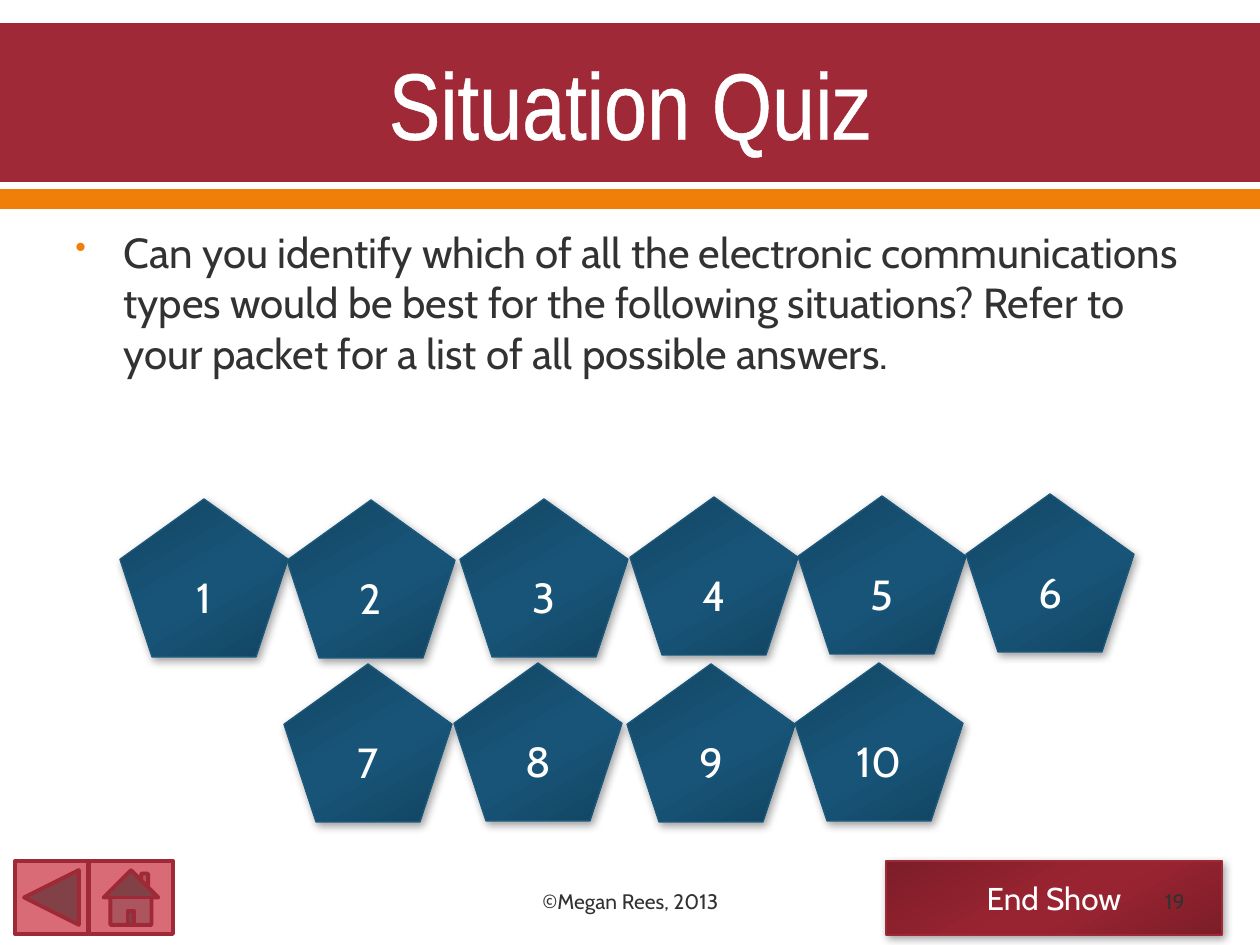
from dataclasses import dataclass

from lxml import etree
from pptx import Presentation
from pptx.dml.color import RGBColor
from pptx.enum.shapes import MSO_SHAPE
from pptx.enum.text import MSO_ANCHOR, PP_ALIGN
from pptx.oxml.ns import qn
from pptx.shapes.autoshape import Shape
from pptx.slide import Slide
from pptx.util import Emu, Pt

RECTANGLE = MSO_SHAPE.RECTANGLE
PENTAGON = MSO_SHAPE.REGULAR_PENTAGON
HOME = MSO_SHAPE.ACTION_BUTTON_HOME
BACK = MSO_SHAPE.ACTION_BUTTON_BACK_OR_PREVIOUS
BLANK_BUTTON = MSO_SHAPE.ACTION_BUTTON_CUSTOM
LEFT, CENTER, RIGHT = PP_ALIGN.LEFT, PP_ALIGN.CENTER, PP_ALIGN.RIGHT
TOP, MIDDLE = MSO_ANCHOR.TOP, MSO_ANCHOR.MIDDLE

EMU_PER_PX = 914400 / 126
EMU_PER_POINT = 12700
ANGLE_UNIT = 60000
BLANK_LAYOUT = 6


@dataclass(frozen=True)
class Theme:
    red: str = "9F2936"
    red_dark: str = "7C1D28"
    red_bright: str = "992431"
    pink: str = "D96B77"
    orange: str = "F07F09"
    blue: str = "1B587C"
    blue_dark: str = "134461"
    blue_bright: str = "175478"
    white: str = "FFFFFF"
    ink: str = "323232"
    shadow: str = "000000"
    title_font: str = "Arial Narrow"
    body_font: str = "Cabin"
    title_size: int = 54
    body_size: int = 24
    button_size: int = 18
    footer_size: int = 12
    thin_line: float = 0.79
    icon_line: float = 2.22
    title_outline: float = 1.1


THEME = Theme()


@dataclass(frozen=True)
class Box:
    left: int
    top: int
    width: int
    height: int


@dataclass(frozen=True)
class Label:
    text: str
    size: int
    color: str = THEME.white
    font: str = THEME.body_font
    align: PP_ALIGN = CENTER
    anchor: MSO_ANCHOR = MIDDLE


@dataclass(frozen=True)
class Glossy:
    """Dark-bright-dark gradient with a thin line."""
    dark: str
    bright: str
    line: str


BLUE_GLOSS = Glossy(THEME.blue_dark, THEME.blue_bright, THEME.blue)
RED_GLOSS = Glossy(THEME.red_dark, THEME.red_bright, THEME.red)

BANDS = ((Box(0, 23, 1260, 159), THEME.red), (Box(0, 189, 1260, 20), THEME.orange))
QUESTION_CORNERS = (
    (120, 499), (287, 500), (460, 499), (630, 497), (798, 496), (966, 494),
    (284, 664), (454, 663), (627, 664), (795, 663),
)
QUESTION_WIDTH, QUESTION_HEIGHT = 168, 158
ICON_BUTTONS = ((HOME, Box(89, 861, 84, 73)), (BACK, Box(15, 861, 73, 73)))
END_BUTTON = Box(886, 861, 336, 74)
TITLE_BOX = Box(63, 25, 1134, 154)
BODY_BOX = Box(63, 220, 1134, 624)
FOOTER_BOX = Box(431, 876, 399, 50)
NUMBER_BOX = Box(903, 876, 294, 50)
BULLET_INDENT = 48


def px(length: int) -> Emu:
    return Emu(round(length * EMU_PER_PX))


def place(box: Box) -> tuple[Emu, ...]:
    return px(box.left), px(box.top), px(box.width), px(box.height)


def add_xml(parent, tag: str, **attributes):
    child = etree.SubElement(parent, qn(tag))
    for name, value in attributes.items():
        child.set(name, str(value))
    return child


def add_color(parent, color: str):
    return add_xml(parent, "a:srgbClr", val=color)


def write(shape: Shape, label: Label) -> None:
    frame = shape.text_frame
    frame.word_wrap = True
    frame.vertical_anchor = label.anchor
    paragraph = frame.paragraphs[0]
    paragraph.alignment = label.align
    run = paragraph.add_run()
    run.text = label.text
    for name, value in {"size": Pt(label.size), "name": label.font}.items():
        setattr(run.font, name, value)
    run.font.color.rgb = RGBColor.from_string(label.color)


def add_text(slide: Slide, box: Box, label: Label) -> Shape:
    shape = slide.shapes.add_textbox(*place(box))
    write(shape, label)
    return shape


def add_flat(slide: Slide, kind: MSO_SHAPE, box: Box, fill: str) -> Shape:
    shape = slide.shapes.add_shape(kind, *place(box))
    shape.shadow.inherit = False
    shape.fill.solid()
    shape.fill.fore_color.rgb = RGBColor.from_string(fill)
    shape.line.fill.background()
    return shape


def set_line(shape: Shape, color: str, width: float) -> None:
    shape.line.color.rgb = RGBColor.from_string(color)
    shape.line.width = Pt(width)


def add_glossy(slide: Slide, kind: MSO_SHAPE, box: Box, gloss: Glossy, label: Label) -> None:
    shape = slide.shapes.add_shape(kind, *place(box))
    shape.fill.gradient()
    shape.fill.gradient_angle = 300
    properties = shape.element.spPr
    stops = properties.find(".//" + qn("a:gsLst"))
    for stop in list(stops):
        stops.remove(stop)
    for percent, color in ((0, gloss.dark), (48, gloss.bright), (58, gloss.bright), (100, gloss.dark)):
        add_color(add_xml(stops, "a:gs", pos=percent * 1000), color)
    set_line(shape, gloss.line, THEME.thin_line)
    shape.shadow.inherit = False
    shadow = add_xml(properties.find(qn("a:effectLst")), "a:outerShdw",
                     blurRad=5 * EMU_PER_POINT, dist=2 * EMU_PER_POINT,
                     dir=60 * ANGLE_UNIT, rotWithShape=0)
    add_xml(add_color(shadow, THEME.shadow), "a:alpha", val=36000)
    write(shape, label)


def outline_text(shape: Shape, color: str, width: float) -> None:
    run_properties = shape.text_frame.paragraphs[0].runs[0].font._element
    line = add_xml(run_properties, "a:ln", w=round(width * EMU_PER_POINT))
    add_color(add_xml(line, "a:solidFill"), color)
    run_properties.insert(0, line)


def add_bullet(shape: Shape) -> None:
    paragraph = shape.text_frame.paragraphs[0]
    paragraph.space_before = Pt(THEME.body_size * 0.2)
    properties = paragraph._p.get_or_add_pPr()
    properties.set("marL", str(px(BULLET_INDENT)))
    properties.set("indent", str(-px(BULLET_INDENT)))
    add_color(add_xml(properties, "a:buClr"), THEME.orange)
    add_xml(properties, "a:buSzPct", val=75000)
    add_xml(properties, "a:buChar", char="•")


def main() -> None:
    presentation = Presentation()
    presentation.slide_width, presentation.slide_height = px(1260), px(945)
    slide = presentation.slides.add_slide(presentation.slide_layouts[BLANK_LAYOUT])

    for box, color in BANDS:
        add_flat(slide, RECTANGLE, box, color)
    title = add_text(slide, TITLE_BOX, Label("Situation Quiz", THEME.title_size, font=THEME.title_font))
    outline_text(title, THEME.white, THEME.title_outline)
    body = add_text(slide, BODY_BOX, Label(
        "Can you identify which of all the electronic communications types would be best "
        "for the following situations? Refer to your packet for a list of all possible answers.",
        THEME.body_size, THEME.ink, align=LEFT, anchor=TOP))
    add_bullet(body)

    for number, (left, top) in enumerate(QUESTION_CORNERS, start=1):
        box = Box(left, top, QUESTION_WIDTH, QUESTION_HEIGHT)
        add_glossy(slide, PENTAGON, box, BLUE_GLOSS, Label(str(number), THEME.body_size))

    for kind, box in ICON_BUTTONS:
        set_line(add_flat(slide, kind, box, THEME.pink), THEME.red, THEME.icon_line)
    add_glossy(slide, BLANK_BUTTON, END_BUTTON, RED_GLOSS, Label("End Show", THEME.button_size))
    add_text(slide, FOOTER_BOX, Label("©Megan Rees, 2013", THEME.footer_size, THEME.ink))
    add_text(slide, NUMBER_BOX, Label("19", THEME.footer_size, THEME.ink, align=RIGHT))

    presentation.save("out.pptx")


if __name__ == "__main__":
    main()
